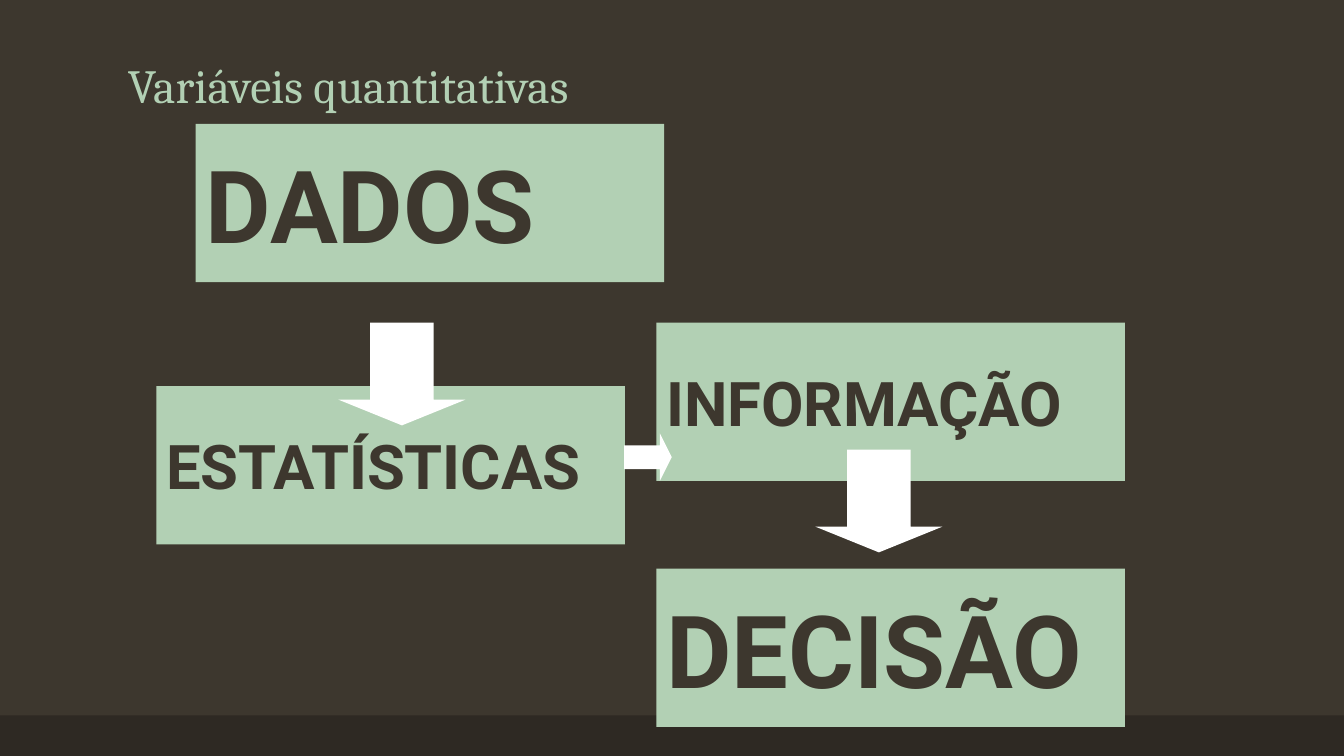
"""Build the slide that leads from data to decision."""
from pptx import Presentation
from pptx.dml.color import RGBColor
from pptx.enum.shapes import MSO_SHAPE
from pptx.enum.text import MSO_ANCHOR, PP_ALIGN
from pptx.util import Cm, Pt

DARK, BAND, GREEN, WHITE = "3D372E", "2E2923", "B2D0B4", "FFFFFF"
BOX_W, BOX_H = 11.81, 3.99
ARROW_W, ARROW_H = 3.2, 2.59
RIGHT_X, MID_Y = 16.54, 8.13


def paint(fill, color):
    fill.solid()
    fill.fore_color.rgb = RGBColor.from_string(color)


def write(frame, text, font, size, color, bold=False):
    frame.text = text
    frame.word_wrap = True
    line = frame.paragraphs[0]
    line.alignment = PP_ALIGN.LEFT
    style = line.runs[0].font
    style.name, style.size, style.bold = font, Pt(size), bold
    style.color.rgb = RGBColor.from_string(color)


def add_shape(slide, kind, left, top, width, height, color):
    shape = slide.shapes.add_shape(kind, Cm(left), Cm(top), Cm(width), Cm(height))
    shape.shadow.inherit = False
    shape.line.fill.background()
    paint(shape.fill, color)
    return shape


def add_title(slide, text):
    title = slide.shapes.title
    title.left, title.top = Cm(2.97), Cm(1.02)
    title.width, title.height = Cm(28.58), Cm(1.98)
    write(title.text_frame, text, "Cambria", 34, GREEN)
    title.text_frame.vertical_anchor = MSO_ANCHOR.BOTTOM
    title.text_frame.paragraphs[0].line_spacing = 0.9


def add_box(slide, text, left, top, size):
    box = add_shape(slide, MSO_SHAPE.RECTANGLE, left, top, BOX_W, BOX_H, GREEN)
    box.text_frame.vertical_anchor = MSO_ANCHOR.MIDDLE
    write(box.text_frame, text, "Roboto", size, DARK, True)


def add_arrow(slide, left, top, width=ARROW_W, height=ARROW_H, turn=0):
    arrow = add_shape(slide, MSO_SHAPE.DOWN_ARROW, left, top, width, height, WHITE)
    arrow.adjustments[0], arrow.adjustments[1] = 0.5, 0.25
    arrow.rotation = turn


def main():
    deck = Presentation()
    deck.slide_width, deck.slide_height = Cm(33.87), Cm(19.05)
    slide = deck.slides.add_slide(deck.slide_layouts[5])
    paint(slide.background.fill, DARK)
    add_shape(slide, MSO_SHAPE.RECTANGLE, 0, 18.03, 33.87, 1.02, BAND)
    add_title(slide, "Variáveis quantitativas")
    add_box(slide, "DADOS", 4.93, 3.12, 72)
    add_box(slide, "DECISÃO", RIGHT_X, 14.33, 72)
    add_box(slide, "ESTATÍSTICAS", 3.94, 9.73, 44)
    add_arrow(slide, 8.53, MID_Y)
    add_box(slide, "INFORMAÇÃO", RIGHT_X, MID_Y, 44)
    add_arrow(slide, 20.55, 11.33)
    add_arrow(slide, 15.73, 10.92, 1.2, 1.2, 270)
    deck.save("out.pptx")


if __name__ == "__main__":
    main()
